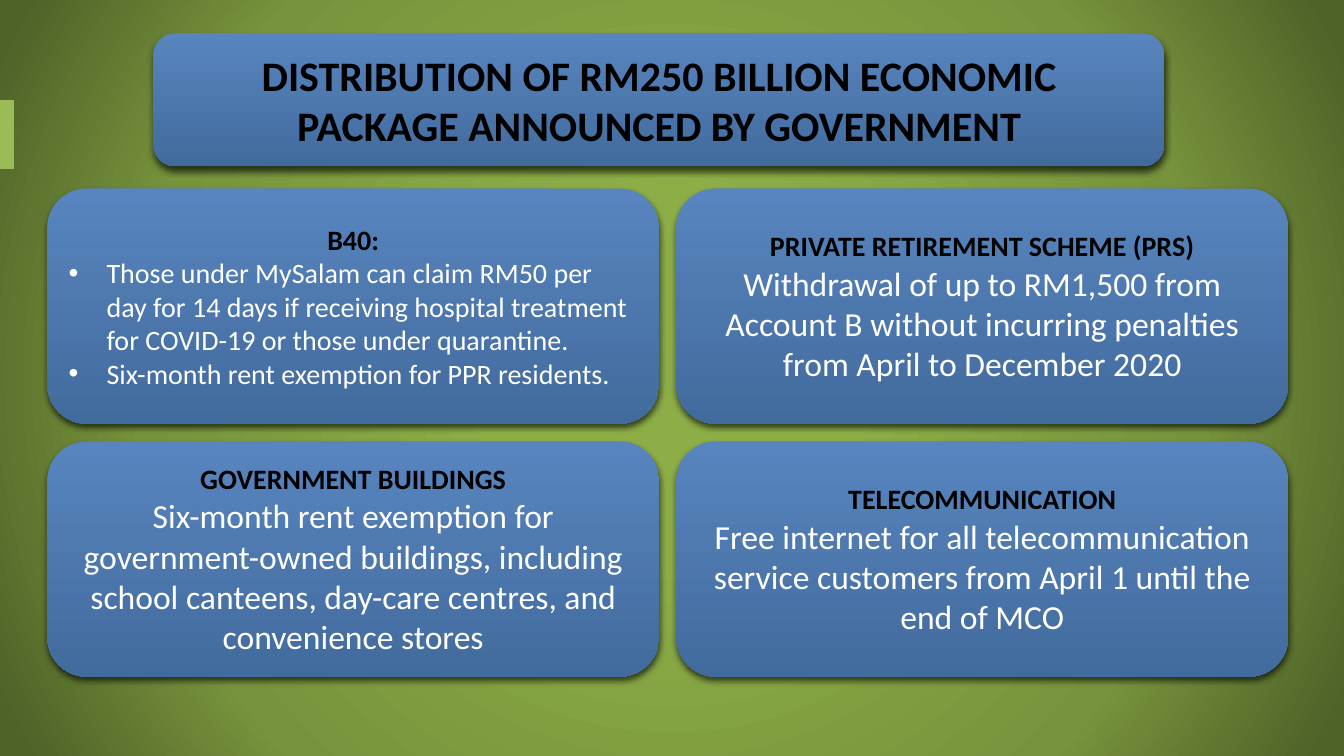
import pptx
import pptx.dml.color
import pptx.enum.dml
import pptx.enum.shapes
import pptx.enum.text
import pptx.oxml
import pptx.oxml.ns
import pptx.util
from lxml import etree

Pt = pptx.util.Pt
qn = pptx.oxml.ns.qn
ALIGN = pptx.enum.text.PP_ALIGN
MIDDLE = pptx.enum.text.MSO_ANCHOR.MIDDLE
DRAWING = pptx.oxml.ns.nsdecls("a")

FONT = "Calibri"
BLACK, WHITE, ACCENT = "000000", "FFFFFF", "9BBB59"
PANEL_GRADIENT = ("5885BF", "426B9D")
BACKGROUND_STOPS = [(0, "8DAE47"), (23, "8DAE47"), (69, "77933C"), (97, "4F6228")]

# Card grid, in points
CARD_LEFT, CARD_TOP = 33.84, 134.64
CARD_WIDTH, CARD_HEIGHT = 437, 168
COLUMN_PITCH, ROW_PITCH = 449.3, 180.7

# Heading, body size, bulleted, body paragraphs
CARDS = [
    ("B40:", 20, True, [
        "Those under MySalam can claim RM50 per day for 14 days if receiving "
        "hospital treatment for COVID-19 or those under quarantine.",
        "Six-month rent exemption for PPR residents."]),
    ("PRIVATE RETIREMENT SCHEME (PRS)", 24, False, [
        "Withdrawal of up to RM1,500 from Account B without incurring "
        "penalties from April to December 2020"]),
    ("GOVERNMENT BUILDINGS", 24, False, [
        "Six-month rent exemption for government-owned buildings, including "
        "school canteens, day-care centres, and convenience stores"]),
    ("TELECOMMUNICATION", 24, False, [
        "Free internet for all telecommunication service customers from "
        "April 1 until the end of MCO"]),
]


def color(hex_text):
    return pptx.dml.color.RGBColor.from_string(hex_text)


def set_background(slide):
    slide.background.fill.gradient()
    stops = "".join(
        f'<a:gs pos="{position * 1000}"><a:srgbClr val="{value}"/></a:gs>'
        for position, value in BACKGROUND_STOPS)
    radial = pptx.oxml.parse_xml(
        f'<a:gradFill {DRAWING} rotWithShape="1"><a:gsLst>{stops}</a:gsLst>'
        '<a:path path="circle"><a:fillToRect l="50000" t="50000" r="50000" '
        'b="50000"/></a:path></a:gradFill>')
    linear = slide.element.find(".//" + qn("p:bgPr")).find(qn("a:gradFill"))
    linear.getparent().replace(linear, radial)


def add_edge_mark(slide, x, top, bottom):
    mark = slide.shapes.add_connector(
        pptx.enum.shapes.MSO_CONNECTOR.STRAIGHT, Pt(x), Pt(bottom), Pt(x), Pt(top))
    mark.line.color.rgb = color(ACCENT)
    mark.line.width = Pt(10)
    properties = mark.element.spPr
    properties.find(qn("a:ln")).set("cap", "sq")
    etree.SubElement(properties, qn("a:effectLst"))


def add_panel(slide, left, top, width, height):
    panel = slide.shapes.add_shape(
        pptx.enum.shapes.MSO_SHAPE.ROUNDED_RECTANGLE,
        Pt(left), Pt(top), Pt(width), Pt(height))
    panel.line.fill.background()
    panel.fill.gradient()
    panel.fill.gradient_angle = 270
    for stop, position, value in zip(panel.fill.gradient_stops, (0, 1), PANEL_GRADIENT):
        stop.position = position
        stop.color.rgb = color(value)
    # Soft shadow straight below
    panel.shadow.inherit = False
    panel.element.spPr.find(qn("a:effectLst")).append(pptx.oxml.parse_xml(
        f'<a:outerShdw {DRAWING} blurRad="{Pt(5)}" dist="{Pt(3)}" dir="5400000" '
        'rotWithShape="0"><a:srgbClr val="000000"><a:alpha val="65000"/>'
        '</a:srgbClr></a:outerShdw>'))
    return panel


def format_paragraph(paragraph, text, size, hex_text, bold=False, bulleted=False):
    paragraph.text = text
    paragraph.alignment = ALIGN.LEFT if bulleted else ALIGN.CENTER
    if bulleted:
        properties = paragraph._p.get_or_add_pPr()
        properties.set("marL", str(Pt(27)))
        properties.set("indent", str(-Pt(27)))
        etree.SubElement(properties, qn("a:buFont")).set("typeface", "Arial")
        etree.SubElement(properties, qn("a:buChar")).set("char", "•")
    font = paragraph.font
    font.name, font.size, font.bold = FONT, Pt(size), bold
    font.color.rgb = color(hex_text)


def add_title(slide):
    banner = add_panel(slide, 109.6, 23.76, 722, 95)
    title = slide.shapes.title
    banner.element.addnext(title.element)
    title.left, title.top, title.width, title.height = Pt(149), Pt(21.6), Pt(644), Pt(99.4)
    frame = title.text_frame
    frame.word_wrap = True
    frame.auto_size = pptx.enum.text.MSO_AUTO_SIZE.NONE
    frame.vertical_anchor = MIDDLE
    format_paragraph(
        frame.paragraphs[0],
        "DISTRIBUTION OF RM250 BILLION ECONOMIC PACKAGE ANNOUNCED BY GOVERNMENT",
        30, BLACK, bold=True)


def add_card(slide, index, heading, size, bulleted, body):
    row, column = divmod(index, 2)
    card = add_panel(slide, CARD_LEFT + column * COLUMN_PITCH,
                     CARD_TOP + row * ROW_PITCH, CARD_WIDTH, CARD_HEIGHT)
    frame = card.text_frame
    frame.word_wrap = True
    frame.vertical_anchor = MIDDLE
    format_paragraph(frame.paragraphs[0], heading, 20, BLACK, bold=True)
    for text in body:
        format_paragraph(frame.add_paragraph(), text, size, WHITE, bulleted=bulleted)


def main():
    presentation = pptx.Presentation()
    presentation.slide_width, presentation.slide_height = Pt(960), Pt(540)
    slide = presentation.slides.add_slide(presentation.slide_layouts[5])
    set_background(slide)
    add_edge_mark(slide, 5, 76.3, 116)
    add_title(slide)
    for index, card in enumerate(CARDS):
        add_card(slide, index, *card)
    presentation.save("out.pptx")


if __name__ == "__main__":
    main()
